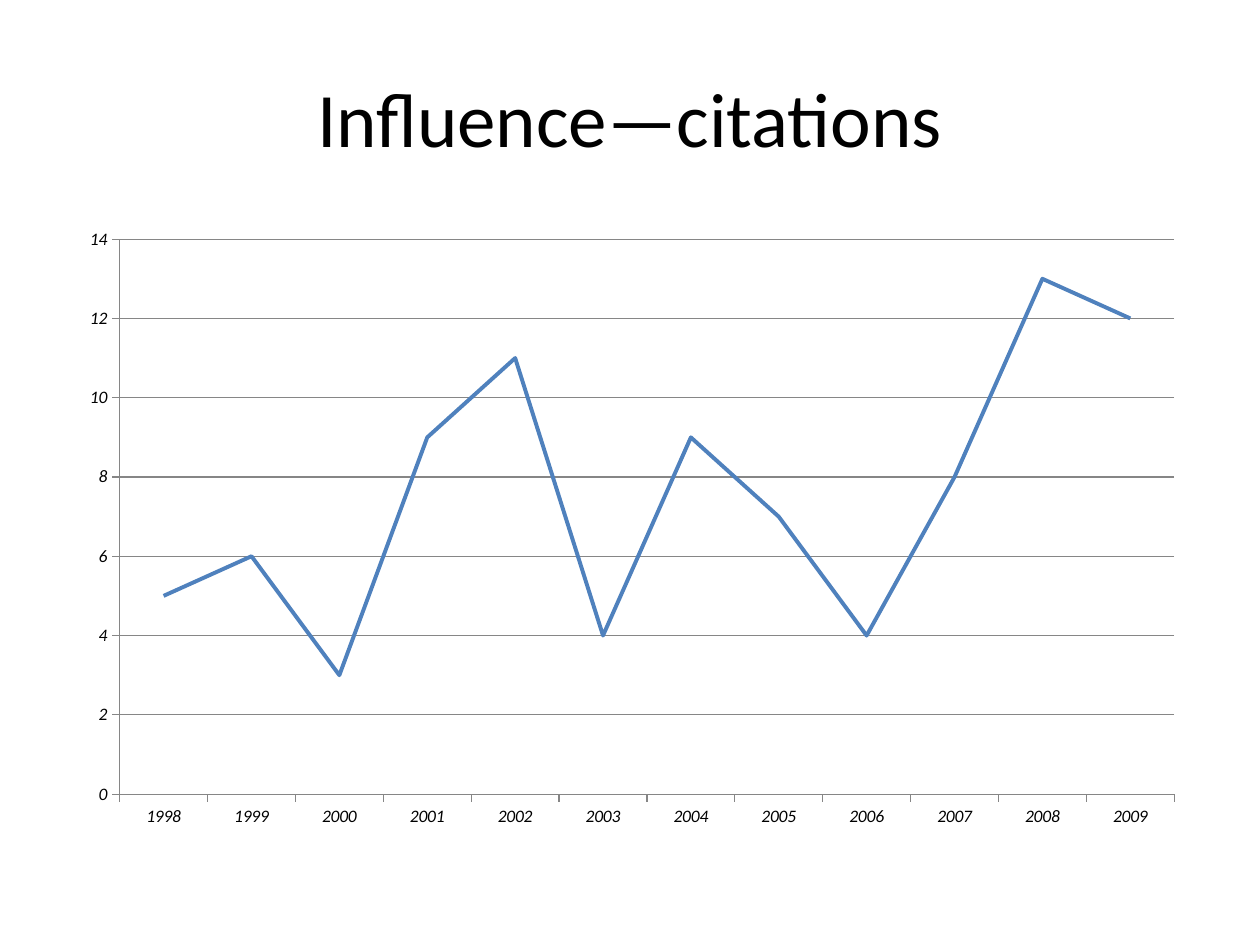
from dataclasses import dataclass

from lxml import etree
from pptx import Presentation
from pptx import util as u
from pptx.chart import data
from pptx.dml import color
from pptx.enum import chart as charts, text
from pptx.oxml import ns

COLORS = {"text": "000000", "line": "4F81BD", "grid": "868686"}
FONT = "Calibri"
FIRST_YEAR = 1998
CITATIONS = (5, 6, 3, 9, 11, 4, 9, 7, 4, 8, 13, 12)


@dataclass(frozen=True)
class Box:
    left: float
    top: float
    width: float
    height: float

    def lengths(self) -> tuple:
        return tuple(u.Pt(v) for v in (self.left, self.top, self.width, self.height))


TITLE_BOX = Box(36, 21.6, 648, 90)
CHART_BOX = Box(36, 126, 648, 356.4)
PLOT_FRACTIONS = {"x": 0.05, "y": 0.03, "w": 0.93, "h": 0.89}


def rgb(name: str) -> color.RGBColor:
    return color.RGBColor.from_string(COLORS[name])


def style_font(font, size: float, italic: bool = False) -> None:
    font.name = FONT
    font.size = u.Pt(size)
    font.bold = False
    font.italic = italic
    font.color.rgb = rgb("text")


def style_line(line, name: str, width: float) -> None:
    line.color.rgb = rgb(name)
    line.width = u.Pt(width)


def style_axis(axis, gridlines: bool) -> None:
    axis.has_major_gridlines = gridlines
    axis.major_tick_mark = charts.XL_TICK_MARK.OUTSIDE
    axis.minor_tick_mark = charts.XL_TICK_MARK.NONE
    style_font(axis.tick_labels.font, 10, italic=True)
    style_line(axis.format.line, "grid", 0.75)
    if gridlines:
        style_line(axis.major_gridlines.format.line, "grid", 0.75)


def place_plot(chart) -> None:
    plot_area = chart._chartSpace.chart.plotArea
    for old_layout in plot_area.findall(ns.qn("c:layout")):
        plot_area.remove(old_layout)
    layout = etree.Element(ns.qn("c:layout"))
    manual = etree.SubElement(layout, ns.qn("c:manualLayout"))
    settings = {"layoutTarget": "inner", "xMode": "edge", "yMode": "edge", **PLOT_FRACTIONS}
    for tag, value in settings.items():
        etree.SubElement(manual, ns.qn(f"c:{tag}")).set("val", str(value))
    plot_area.insert(0, layout)


def add_title(slide, wording: str) -> None:
    title = slide.shapes.title
    title.left, title.top, title.width, title.height = TITLE_BOX.lengths()
    title.text_frame.text = wording
    title.text_frame.vertical_anchor = text.MSO_ANCHOR.MIDDLE
    paragraph = title.text_frame.paragraphs[0]
    paragraph.alignment = text.PP_ALIGN.CENTER
    style_font(paragraph.runs[0].font, 44)


def add_citation_chart(slide) -> None:
    chart_data = data.CategoryChartData()
    chart_data.categories = [str(FIRST_YEAR + i) for i in range(len(CITATIONS))]
    chart_data.add_series("Series 1", CITATIONS)
    chart = slide.shapes.add_chart(
        charts.XL_CHART_TYPE.LINE, *CHART_BOX.lengths(), chart_data
    ).chart
    chart.has_title = False
    chart.has_legend = False
    style_font(chart.font, 10, italic=True)
    style_axis(chart.category_axis, gridlines=False)
    style_axis(chart.value_axis, gridlines=True)
    chart.value_axis.minimum_scale = 0
    chart.value_axis.maximum_scale = 14
    chart.value_axis.major_unit = 2
    plot = chart.plots[0]
    plot.vary_by_categories = False
    series = plot.series[0]
    series.smooth = False
    series.marker.style = charts.XL_MARKER_STYLE.NONE
    style_line(series.format.line, "line", 2.25)
    place_plot(chart)


def main() -> None:
    presentation = Presentation()
    presentation.slide_width = u.Pt(720)
    presentation.slide_height = u.Pt(540)
    slide = presentation.slides.add_slide(presentation.slide_layouts[5])
    add_title(slide, "Influence—citations")
    add_citation_chart(slide)
    presentation.save("out.pptx")


if __name__ == "__main__":
    main()
